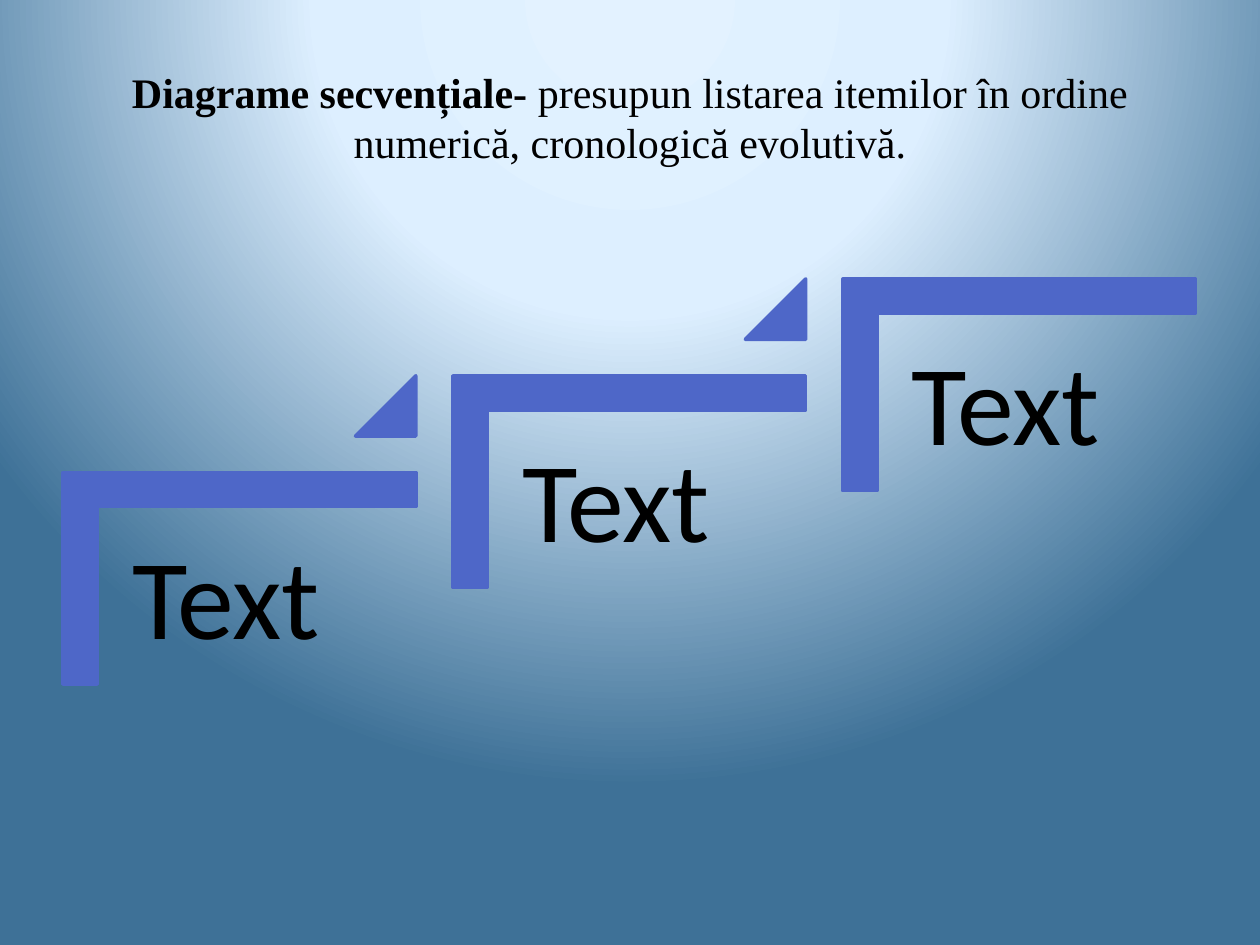
from lxml import etree
from pptx import Presentation
from pptx.dml import color
from pptx.enum import shapes, text
from pptx.oxml import ns
from pptx.util import Pt

BLUE = "4E67C8"
BLACK = "000000"


def paint(fmt, tint):
    fmt.rgb = color.RGBColor.from_string(tint)


def backdrop(slide):
    fill = slide.background.fill
    fill.gradient()
    grad = slide.background._cSld.find(".//" + ns.qn("a:gradFill"))
    for part in list(grad):
        grad.remove(part)
    stops = etree.SubElement(grad, ns.qn("a:gsLst"))
    for pos, tint in ((0, "E3F2FF"), (40, "DDEFFF"), (100, "3E7197")):
        stop = etree.SubElement(stops, ns.qn("a:gs"), pos=str(pos * 1000))
        etree.SubElement(stop, ns.qn("a:srgbClr"), val=tint)
    shade = etree.SubElement(grad, ns.qn("a:path"), path="circle")
    etree.SubElement(shade, ns.qn("a:fillToRect"),
                     l="50000", t="-80000", r="50000", b="180000")


def write(para, words, face, size, bold=False):
    run = para.add_run()
    run.text = words
    run.font.name = face
    run.font.size = Pt(size)
    run.font.bold = bold
    paint(run.font.color, BLACK)


def frame(slide, x, y, w, h, inset=None):
    body = slide.shapes.add_textbox(Pt(x), Pt(y), Pt(w), Pt(h)).text_frame
    body.word_wrap = True
    if inset is not None:
        body.margin_left = body.margin_right = Pt(inset)
        body.margin_top = body.margin_bottom = Pt(inset)
    return body


def solid(slide, kind, x, y, w, h, ratios):
    shape = slide.shapes.add_shape(kind, Pt(x), Pt(y), Pt(w), Pt(h))
    shape.shadow.inherit = False
    for i, ratio in enumerate(ratios):
        shape.adjustments[i] = ratio
    shape.fill.solid()
    paint(shape.fill.fore_color, BLUE)
    paint(shape.line.color, BLUE)
    shape.line.width = Pt(2)
    return shape


def title(slide, x, y, w, h):
    body = frame(slide, x, y, w, h)
    body.vertical_anchor = text.MSO_ANCHOR.MIDDLE
    para = body.paragraphs[0]
    para.alignment = text.PP_ALIGN.CENTER
    face = "Times New Roman"
    write(para, "Diagrame secvențiale- ", face, 24, True)
    write(para, "presupun listarea itemilor în ordine numerică, "
          "cronologică evolutivă.", face, 24)


def step(slide, x, y, w, h, label, rise, last):
    shift = (w - h) / 2
    angle = solid(slide, shapes.MSO_SHAPE.CORNER,
                  x + shift, y - shift, h, w, (0.161, 0.161))
    angle.rotation = 90
    body = frame(slide, x + 20, y + 19.6, 182, 160, 19.5)
    para = body.paragraphs[0]
    para.line_spacing = 0.9
    write(para, label, "Calibri", 65)
    if not last:
        side = 34.5
        solid(slide, shapes.MSO_SHAPE.ISOSCELES_TRIANGLE,
              x + w - side, y - rise, side, side, (1,))


def stairs(slide, x, y, labels):
    run, rise = 222.8, 55.3
    for i, label in enumerate(labels):
        step(slide, x + i * run, y - i * rise, 201.6, 121,
             label, rise, i == len(labels) - 1)


def main():
    deck = Presentation()
    deck.slide_width, deck.slide_height = Pt(720), Pt(540)
    slide = deck.slides.add_slide(deck.slide_layouts[6])
    backdrop(slide)
    title(slide, 36, 21.6, 648, 90)
    stairs(slide, 36, 270, ["Text"] * 3)
    deck.save("out.pptx")


if __name__ == "__main__":
    main()
